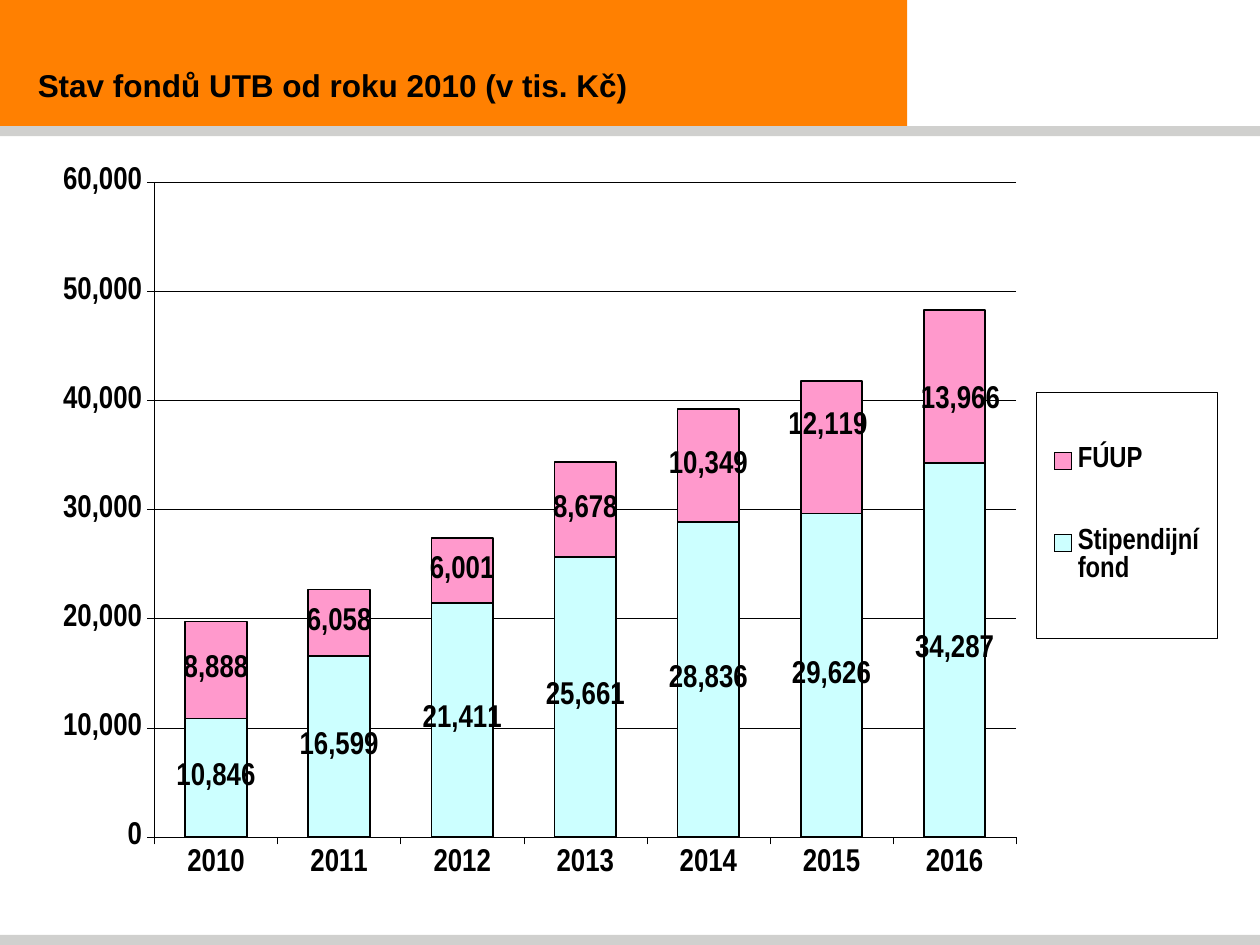
"""Build a slide with a stacked column chart of university funds by year."""
from lxml.etree import SubElement
from pptx import Presentation
from pptx.chart.data import CategoryChartData
from pptx.dml.color import RGBColor
from pptx.enum.chart import XL_CHART_TYPE, XL_LEGEND_POSITION, XL_TICK_LABEL_POSITION, XL_TICK_MARK
from pptx.enum.shapes import MSO_SHAPE
from pptx.enum.text import MSO_ANCHOR
from pptx.oxml import parse_xml
from pptx.oxml.ns import nsdecls, qn
from pptx.util import Inches, Pt

ORANGE = RGBColor(0xFF, 0x80, 0x01)
GREY = RGBColor(0xD0, 0xD0, 0xCE)
BLACK = RGBColor(0, 0, 0)
CYAN = RGBColor(0xCC, 0xFF, 0xFF)
PINK = RGBColor(0xFF, 0x99, 0xCC)


def style_font(font, size, name="Arial Narrow"):
    for key, value in {"size": Pt(size), "name": name, "bold": True}.items():
        setattr(font, key, value)
    font.color.rgb = BLACK


def place(parent, index, **values):
    for old in parent.findall(qn("c:layout")):
        parent.remove(old)
    layout = parse_xml(f"<c:layout {nsdecls('c')}/>")
    manual = SubElement(layout, qn("c:manualLayout"))
    for tag, value in values.items():
        SubElement(manual, qn(f"c:{tag}")).set("val", str(value))
    parent.insert(index, layout)


deck = Presentation()
deck.slide_width, deck.slide_height = Inches(10), Inches(7.5)
page = deck.slides.add_slide(deck.slide_layouts[6])

for left, top, width, height, color in (
    (0, 0, 7.2, 1, ORANGE),
    (0, 7.42, 10, 0.08, GREY),
    (0, 1, 10, 0.08, GREY),
):
    band = page.shapes.add_shape(
        MSO_SHAPE.RECTANGLE, Inches(left), Inches(top), Inches(width), Inches(height))
    band.shadow.inherit = False
    band.fill.solid()
    band.fill.fore_color.rgb = color
    band.line.fill.background()

box = page.shapes.add_textbox(0, Inches(0.33), Inches(7.2), Inches(0.68))
frame_format = {"word_wrap": True, "vertical_anchor": MSO_ANCHOR.MIDDLE, "margin_left": Inches(0.3)}
for key, value in frame_format.items():
    setattr(box.text_frame, key, value)
span = box.text_frame.paragraphs[0].add_run()
span.text = "Stav fondů UTB od roku 2010 (v tis. Kč)"
style_font(span.font, 18, "Arial")

data = CategoryChartData(number_format="#,##0")
data.categories = [str(year) for year in range(2010, 2017)]
data.add_series("Stipendijní fond", (10846, 16599, 21411, 25661, 28836, 29626, 34287))
data.add_series("FÚUP", (8888, 6058, 6001, 8678, 10349, 12119, 13966))
chart = page.shapes.add_chart(
    XL_CHART_TYPE.COLUMN_STACKED, Inches(0.36), Inches(1.33), Inches(9.42), Inches(5.95), data).chart
chart.has_title = False
style_font(chart.font, 18)
place(chart._chartSpace.chart.plotArea, 0, layoutTarget="inner", xMode="edge", yMode="edge",
      x=0.092, y=0.019, w=0.726, h=0.874)

plot = chart.plots[0]
for key, value in {"gap_width": 100, "overlap": 100, "vary_by_categories": False}.items():
    setattr(plot, key, value)
for series, color in zip(plot.series, (CYAN, PINK)):
    series.format.fill.solid()
    series.format.fill.fore_color.rgb = color
    series.format.line.color.rgb = BLACK
    series.format.line.width = Pt(1)
    labels = series.data_labels
    label_format = {"show_value": True, "number_format": "#,##0", "number_format_is_linked": False}
    for key, value in label_format.items():
        setattr(labels, key, value)
    style_font(labels.font, 18)

funds = plot.series[1]
for index, shift_x, shift_y in ((5, -0.003, -0.028), (6, 0.005, 0.019)):
    style_font(funds.points[index].data_label.font, 18)
    label = funds.data_labels._element.findall(qn("c:dLbl"))[-1]
    place(label, 1, x=shift_x, y=shift_y)

for axis in (chart.category_axis, chart.value_axis):
    axis.major_tick_mark = XL_TICK_MARK.OUTSIDE
    axis.minor_tick_mark = XL_TICK_MARK.NONE
    axis.format.line.color.rgb = BLACK
    axis.format.line.width = Pt(0.25)
    style_font(axis.tick_labels.font, 18)
chart.category_axis.tick_label_position = XL_TICK_LABEL_POSITION.LOW
values = chart.value_axis
for key, value in {"minimum_scale": 0, "maximum_scale": 60000, "major_unit": 10000}.items():
    setattr(values, key, value)
values.tick_labels.number_format = "#,##0"
values.tick_labels.number_format_is_linked = False
values.major_gridlines.format.line.color.rgb = BLACK
values.major_gridlines.format.line.width = Pt(0.25)

chart.has_legend = True
legend = chart.legend
legend.position = XL_LEGEND_POSITION.RIGHT
legend.include_in_layout = False
style_font(legend.font, 16.6)
place(legend._element, 1, xMode="edge", yMode="edge", x=0.835, y=0.3, w=0.152, h=0.328)
legend._element.find(qn("c:txPr")).addprevious(parse_xml(
    f"<c:spPr {nsdecls('c', 'a')}><a:solidFill><a:srgbClr val='FFFFFF'/></a:solidFill>"
    f"<a:ln w='{Pt(0.25)}'><a:solidFill><a:srgbClr val='{BLACK}'/></a:solidFill></a:ln></c:spPr>"))

deck.save("out.pptx")
